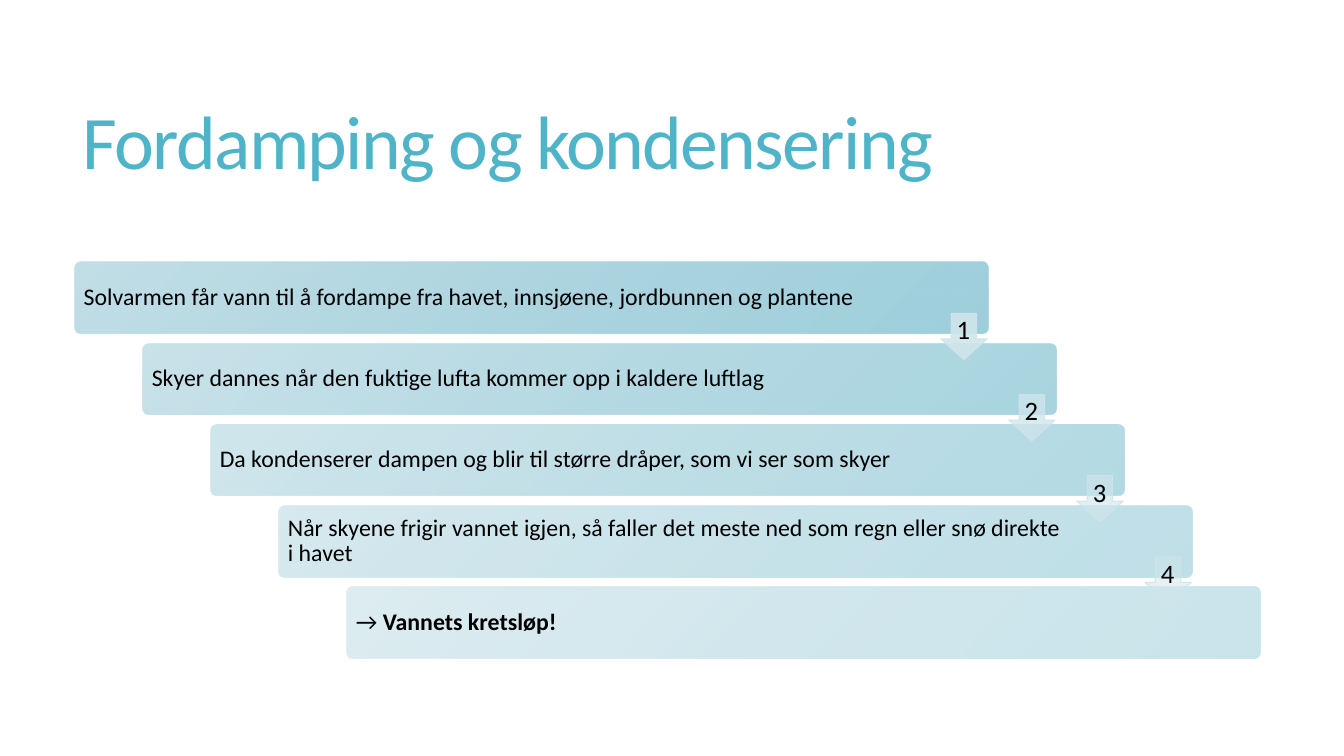
"""Build a slide with a staircase of steps about evaporation and condensation."""
import pptx
import pptx.dml.color
import pptx.enum.shapes
import pptx.enum.text
import pptx.oxml
import pptx.oxml.ns
import pptx.util
from pptx.util import Inches

COLORS = {
    "title": "50B4C8",
    "text": "000000",
    "bar_start": "BDDCE5",
    "bar_middle": "A5D1DD",
    "bar_end": "94CBD9",
    "arrow": "D0E5EB",
}
FONT = "Calibri"
STEPS = [
    [("Solvarmen får vann til å fordampe fra havet, innsjøene, jordbunnen og plantene", False)],
    [("Skyer dannes når den fuktige lufta kommer opp i kaldere luftlag", False)],
    [("Da kondenserer dampen og blir til større dråper, som vi ser som skyer", False)],
    [("Når skyene frigir vannet igjen, så faller det meste ned som regn eller snø direkte i havet", False)],
    [("→ ", False), ("Vannets kretsløp!", True)],
]
STEP_X = 2.7 / 4
STEP_Y = 3.22 / 4


def rgb(name):
    return pptx.dml.color.RGBColor.from_string(COLORS[name])


def set_alpha(color_element, percent):
    alpha = pptx.oxml.parse_xml(
        f'<a:alpha {pptx.oxml.ns.nsdecls("a")} val="{round(percent * 1000)}"/>')
    color_element.append(alpha)


def add_text(slide, box, runs, size, color="text", inset=0.1, line_spacing=0.9,
             alignment=pptx.enum.text.PP_ALIGN.LEFT, letter_spacing=0):
    text_box = slide.shapes.add_textbox(*map(Inches, box))
    frame = text_box.text_frame
    frame.word_wrap = True
    frame.vertical_anchor = pptx.enum.text.MSO_ANCHOR.MIDDLE
    frame.margin_left = frame.margin_right = Inches(inset)
    frame.margin_top = frame.margin_bottom = Inches(min(inset, 0.07))
    paragraph = frame.paragraphs[0]
    paragraph.alignment = alignment
    paragraph.line_spacing = line_spacing
    for text, bold in runs:
        run = paragraph.add_run()
        run.text = text
        run.font.name = FONT
        run.font.size = pptx.util.Pt(size)
        run.font.bold = bold
        run.font.color.rgb = rgb(color)
        if letter_spacing:
            run.font._element.set("spc", str(round(letter_spacing * 100)))


def add_bar(slide, left, top, opacity):
    bar = slide.shapes.add_shape(
        pptx.enum.shapes.MSO_SHAPE.ROUNDED_RECTANGLE,
        Inches(left), Inches(top), Inches(9.06), Inches(0.71))
    bar.adjustments[0] = 0.1
    bar.shadow.inherit = False
    bar.line.fill.background()
    bar.fill.gradient()
    bar.fill.gradient_angle = 315
    stop_list = bar._element.spPr.find(".//" + pptx.oxml.ns.qn("a:gsLst"))
    for stop in list(stop_list):
        stop_list.remove(stop)
    for position, name in ((0, "bar_start"), (50, "bar_middle"), (100, "bar_end")):
        stop = pptx.oxml.parse_xml(
            f'<a:gs {pptx.oxml.ns.nsdecls("a")} pos="{position * 1000}">'
            f'<a:srgbClr val="{COLORS[name]}"/></a:gs>')
        set_alpha(stop[0], opacity)
        stop_list.append(stop)


def add_arrow(slide, left, top, opacity):
    arrow = slide.shapes.add_shape(
        pptx.enum.shapes.MSO_SHAPE.DOWN_ARROW,
        Inches(left), Inches(top), Inches(0.46), Inches(0.46))
    arrow.adjustments[0] = 0.55
    arrow.adjustments[1] = 0.45
    arrow.shadow.inherit = False
    arrow.fill.solid()
    arrow.fill.fore_color.rgb = rgb("arrow")
    arrow.line.color.rgb = rgb("arrow")
    arrow.line.width = pptx.util.Pt(0.75)
    fill_color, line_color = arrow._element.spPr.iter(pptx.oxml.ns.qn("a:srgbClr"))
    set_alpha(fill_color, opacity)
    set_alpha(line_color, 90)


def main():
    presentation = pptx.Presentation()
    presentation.slide_width = Inches(13.33)
    presentation.slide_height = Inches(7.5)
    slide = presentation.slides.add_slide(presentation.slide_layouts[6])

    add_text(slide, (0.72, 0.55, 11.78, 1.81), [("Fordamping og kondensering", False)],
             54, color="title", line_spacing=0.85, letter_spacing=-1.2)

    for index, runs in enumerate(STEPS):
        left, top = 0.74 + index * STEP_X, 2.6 + index * STEP_Y
        add_bar(slide, left, top, 90 - 10 * index)
        text_width = 8.21 if index == 0 else 7.88
        add_text(slide, (left + 0.02, top + 0.02, text_width, 0.67), runs, 17, inset=0.07)

    arrow_count = len(STEPS) - 1
    for index in range(arrow_count):
        left, top = 9.33 + index * STEP_X, 3.11 + index * STEP_Y
        add_arrow(slide, left, top, 90 - 40 * index / (arrow_count - 1))
        add_text(slide, (left + 0.1, top, 0.25, 0.35), [(str(index + 1), False)], 19,
                 inset=0.03, alignment=pptx.enum.text.PP_ALIGN.CENTER)

    presentation.save("out.pptx")


if __name__ == "__main__":
    main()
